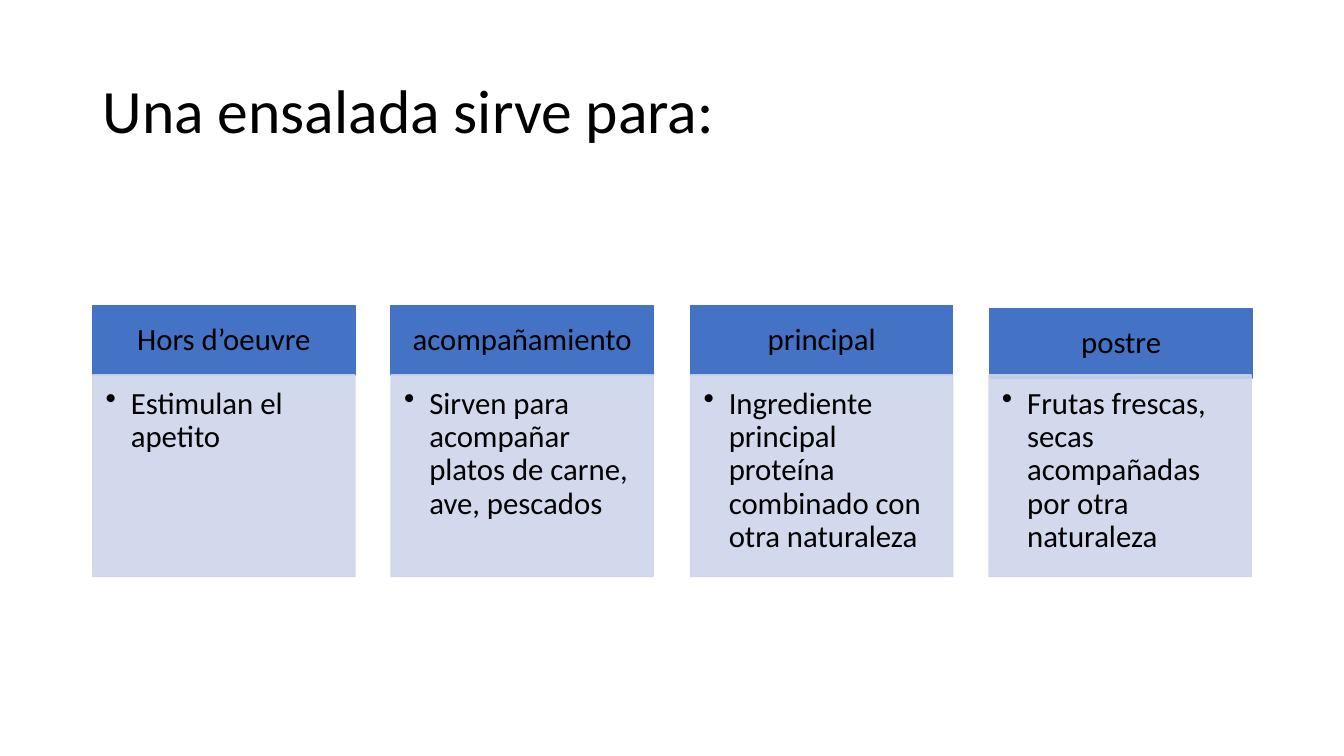
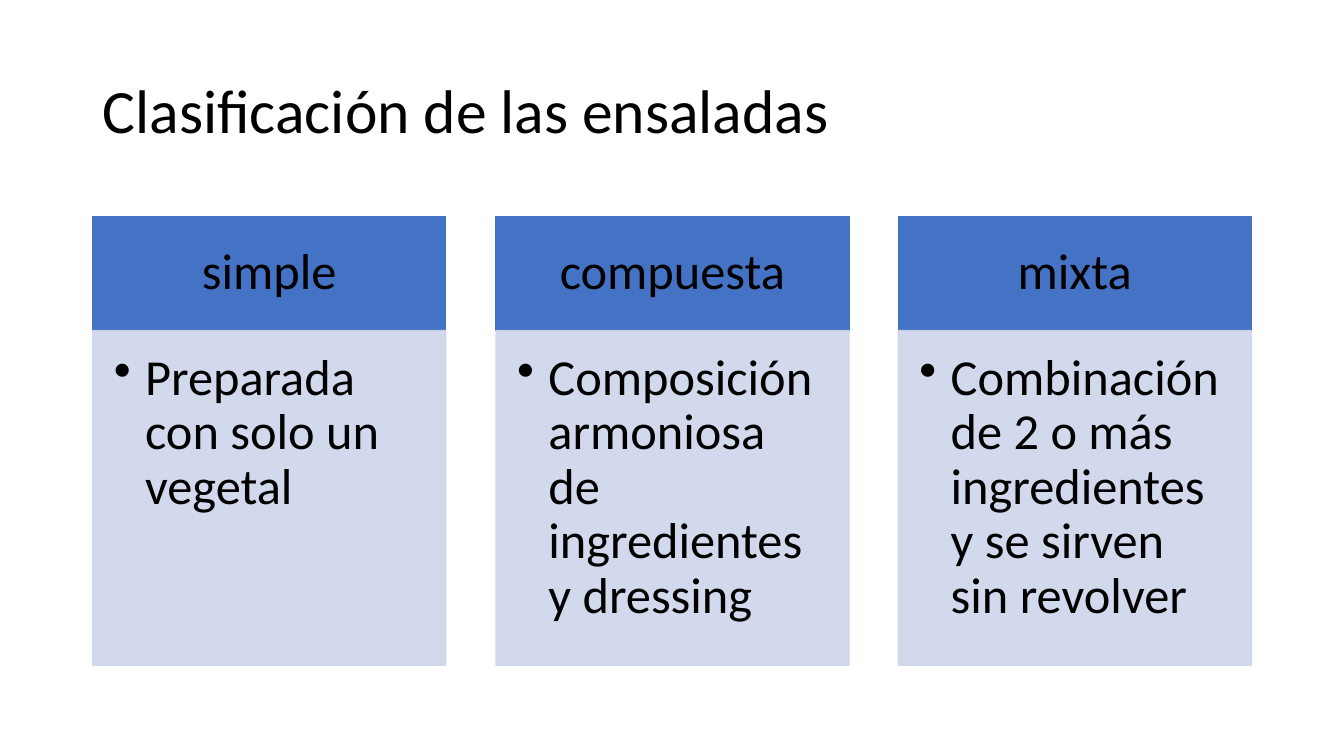
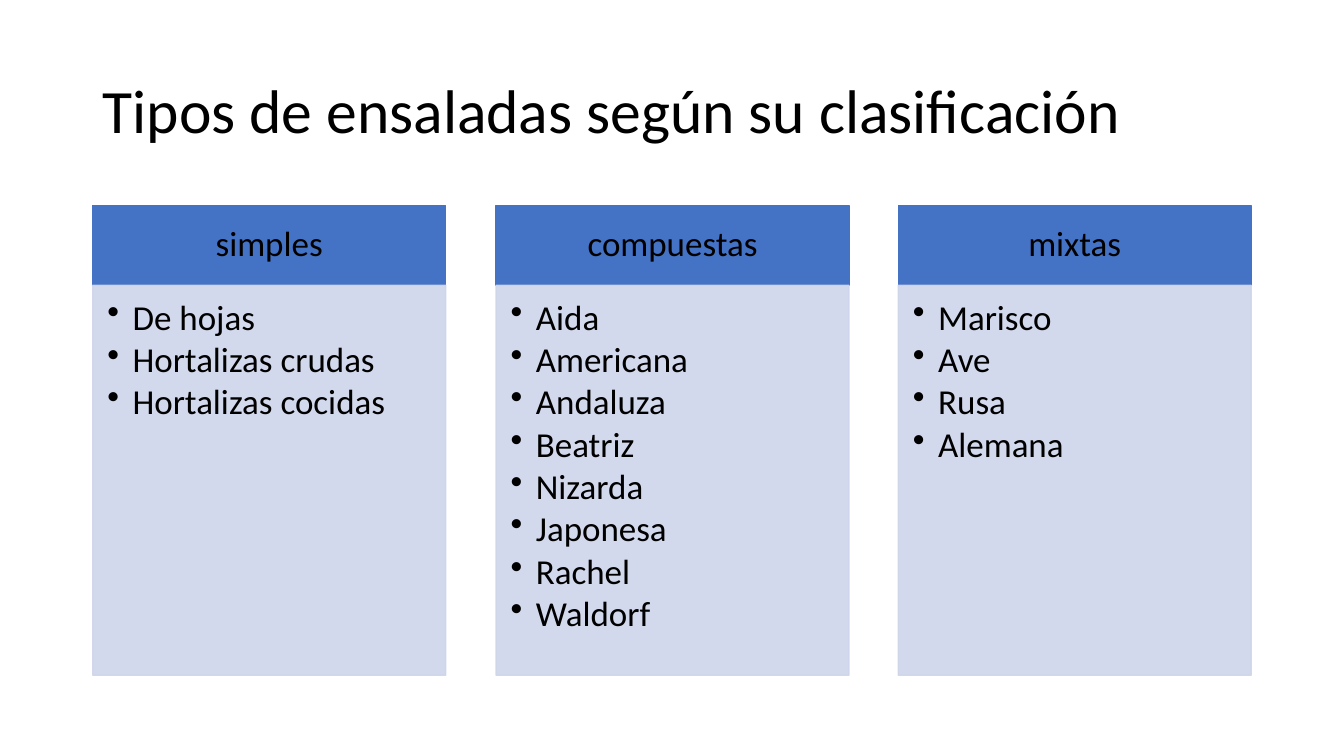
from dataclasses import dataclass

from lxml import etree
from pptx import Presentation
from pptx import util as u
from pptx.dml.color import RGBColor
from pptx.enum import shapes, text
from pptx.oxml import ns

PX = 9144  # EMU per px, 100 px to the inch
FONT = "Calibri"
BLACK = RGBColor(0x00, 0x00, 0x00)
BLUE = RGBColor(0x44, 0x72, 0xC4)
PALE_BLUE = RGBColor(0xCF, 0xD5, 0xEA)
PALE_OPACITY = 90

LEFT = 92
RIGHT = 1241
TITLE_TOP, TITLE_WIDTH, TITLE_HEIGHT, TITLE_SIZE = 40, 1150, 145, 44


@dataclass(frozen=True)
class Column:
    heading: str
    items: list[str]
    shift_x: int = 0  # nudge of the heading, px
    shift_y: int = 0


@dataclass(frozen=True)
class ColumnSlide:
    title: str
    size: int  # points
    top: int
    width: int
    heading_height: int
    body_height: int
    indent: int
    columns: list[Column]


SLIDES = [
    ColumnSlide("Una ensalada sirve para:", 22, 303, 260, 69, 200, 25, [
        Column("Hors d’oeuvre", ["Estimulan el apetito"]),
        Column("acompañamiento", ["Sirven para acompañar platos de carne, ave, pescados"]),
        Column("principal", ["Ingrediente principal proteína combinado con otra naturaleza"]),
        Column("postre", ["Frutas frescas, secas acompañadas por otra naturaleza"], 1, 3),
    ]),
    ColumnSlide("Clasificación de las ensaladas", 36, 215, 350, 113, 332, 31, [
        Column("simple", ["Preparada con solo un vegetal"]),
        Column("compuesta", ["Composición armoniosa de ingredientes y dressing"]),
        Column("mixta", ["Combinación de 2 o más ingredientes y se sirven sin revolver"]),
    ]),
    ColumnSlide("Tipos de ensaladas según su clasificación", 25, 204, 350, 79, 387, 25, [
        Column("simples", ["De hojas", "Hortalizas crudas", "Hortalizas cocidas"]),
        Column("compuestas", ["Aida", "Americana", "Andaluza", "Beatriz",
                              "Nizarda", "Japonesa", "Rachel", "Waldorf"]),
        Column("mixtas", ["Marisco", "Ave", "Rusa", "Alemana"]),
    ]),
]


def px(*lengths: int) -> list[int]:
    return [length * PX for length in lengths]


def style_paragraph(paragraph, size: int, align=text.PP_ALIGN.LEFT) -> None:
    paragraph.alignment = align
    paragraph.line_spacing = 0.9
    paragraph.font.name = FONT
    paragraph.font.size = u.Pt(size)
    paragraph.font.color.rgb = BLACK


def add_bullet(paragraph, indent: int) -> None:
    properties = paragraph._p.get_or_add_pPr()
    properties.set("marL", str(indent * PX))
    properties.set("indent", str(-indent * PX))
    etree.SubElement(properties, ns.qn("a:buChar")).set("char", "•")


def set_opacity(shape, percent: int) -> None:
    """Apply one opacity to the solid fill and the line of a shape."""
    for color in shape._element.spPr.iter(ns.qn("a:srgbClr")):
        etree.SubElement(color, ns.qn("a:alpha")).set("val", str(percent * 1000))


def add_panel(page, left: int, top: int, width: int, height: int, color: RGBColor,
              margins: tuple[float, float, float, float]):
    """Draw a filled rectangle; margins are left, top, right, bottom in points."""
    panel = page.shapes.add_shape(shapes.MSO_SHAPE.RECTANGLE, *px(left, top, width, height))
    panel.shadow.inherit = False
    panel.fill.solid()
    panel.fill.fore_color.rgb = color
    panel.line.color.rgb = color
    panel.line.width = u.Pt(1)
    frame = panel.text_frame
    frame.word_wrap = True
    (frame.margin_left, frame.margin_top,
     frame.margin_right, frame.margin_bottom) = [u.Pt(margin) for margin in margins]
    return panel


def add_title(page, title: str) -> None:
    box = page.shapes.add_textbox(*px(LEFT, TITLE_TOP, TITLE_WIDTH, TITLE_HEIGHT))
    frame = box.text_frame
    frame.word_wrap = True
    frame.vertical_anchor = text.MSO_ANCHOR.MIDDLE
    frame.text = title
    style_paragraph(frame.paragraphs[0], TITLE_SIZE)


def add_column(page, layout: ColumnSlide, column: Column, left: int) -> None:
    size = layout.size
    side, edge, near, bottom = [size * share for share in (0.56, 0.32, 0.42, 0.64)]

    heading = add_panel(page, left + column.shift_x, layout.top + column.shift_y,
                        layout.width, layout.heading_height, BLUE, (side, edge, side, edge))
    heading.text_frame.vertical_anchor = text.MSO_ANCHOR.MIDDLE
    heading.text_frame.text = column.heading
    style_paragraph(heading.text_frame.paragraphs[0], size, text.PP_ALIGN.CENTER)

    body = add_panel(page, left, layout.top + layout.heading_height,
                     layout.width, layout.body_height, PALE_BLUE, (near, near, side, bottom))
    set_opacity(body, PALE_OPACITY)
    body.text_frame.vertical_anchor = text.MSO_ANCHOR.TOP
    body.text_frame.text = "\n".join(column.items)
    for paragraph in body.text_frame.paragraphs:
        style_paragraph(paragraph, size)
        paragraph.space_after = u.Pt(size * 0.13)
        add_bullet(paragraph, layout.indent)


def add_column_slide(deck, layout: ColumnSlide) -> None:
    page = deck.slides.add_slide(deck.slide_layouts[6])
    add_title(page, layout.title)
    pitch = (RIGHT - LEFT - layout.width) / (len(layout.columns) - 1)
    for index, column in enumerate(layout.columns):
        add_column(page, layout, column, round(LEFT + index * pitch))


def main() -> None:
    deck = Presentation()
    deck.slide_width, deck.slide_height = u.Inches(13.33), u.Inches(7.5)
    for layout in SLIDES:
        add_column_slide(deck, layout)
    deck.save("out.pptx")


if __name__ == "__main__":
    main()
